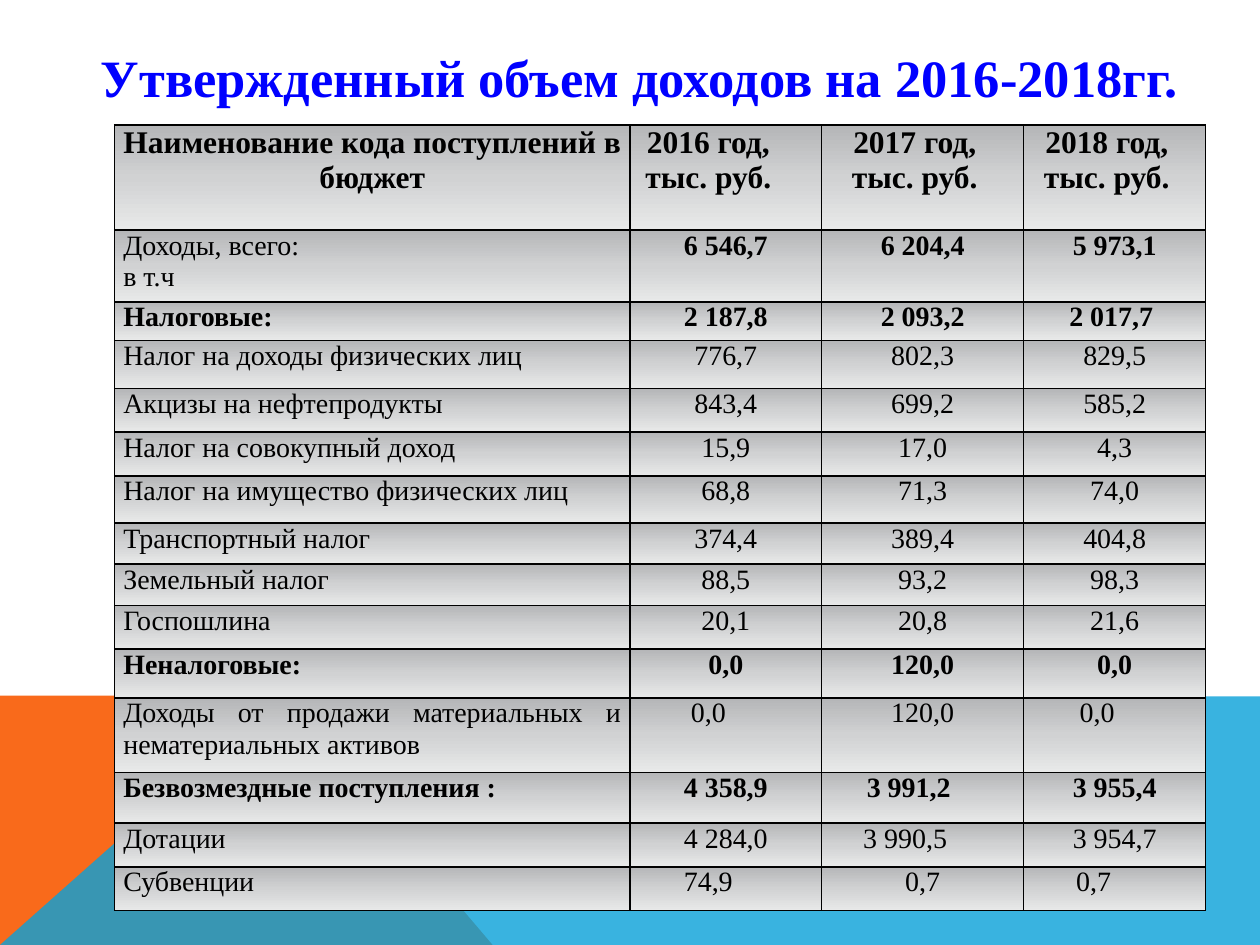
import pptx
import pptx.dml.color
import pptx.enum.text
import pptx.oxml
import pptx.oxml.ns
import pptx.util
from lxml import etree

Pt = pptx.util.Pt
ALIGN = pptx.enum.text.PP_ALIGN
FONT = "Times New Roman"

TITLE = "Утвержденный объем доходов на 2016-2018гг."
# Cells are lists of lines; a number after a text shifts it left by widening the right margin.
HEADER = ["Наименование кода поступлений в бюджет",
          ("2016 год,\nтыс. руб.", 20),
          ("2017 год,\nтыс. руб.", 9),
          ("2018 год,\nтыс. руб.", 9)]
# height, bold label, bold values, cells
ROWS = [
    (60, True, True, HEADER),
    (41, False, True, ["Доходы, всего:\nв т.ч", "6 546,7", "6 204,4", "5 973,1"]),
    (22, True, True, ["Налоговые:", "2 187,8", "2 093,2", ("2 017,7", 4)]),
    (27.5, False, False, ["Налог на доходы физических лиц", "776,7", "802,3", "829,5"]),
    (25, False, False, ["Акцизы на нефтепродукты", "843,4", "699,2", "585,2"]),
    (25, False, False, ["Налог на совокупный доход", "15,9", "17,0", "4,3"]),
    (27, False, False, ["Налог на имущество физических лиц", "68,8", "71,3", "74,0"]),
    (23.5, False, False, ["Транспортный налог", "374,4", "389,4", "404,8"]),
    (23.5, False, False, ["Земельный налог", "88,5", "93,2", "98,3"]),
    (25, False, False, ["Госпошлина", "20,1", "20,8", "21,6"]),
    (28, True, True, ["Неналоговые:", "0,0", "120,0", "0,0"]),
    (42.5, False, False, ["Доходы от продажи материальных и нематериальных активов",
                          ("0,0", 20), "120,0", ("0,0", 20)]),
    (29, True, True, ["Безвозмездные поступления :", "4 358,9", ("3 991,2", 16), "3 955,4"]),
    (25, False, False, ["Дотации", "4 284,0", ("3 990,5", 20), "3 954,7"]),
    (25, False, False, ["Субвенции", ("74,9", 20), "0,7", ("0,7", 24)]),
]
COLUMNS = [294.5, 109.5, 115.5, 104]
GRADIENT = [(0, "B5B6B8"), (50, "D1D2D3"), (100, "E8E9E9")]
BANDS = [
    ("F96A1B", 100, [(0, 540), (0, 397.5), (160.5, 397.5), (281.5, 540)]),
    ("08A1D9", 80, [(0, 540), (160.5, 397.5), (720, 398), (720, 540)]),
]


def rgb(hex_color):
    return pptx.dml.color.RGBColor.from_string(hex_color)


def add_run(p, text, size, color, bold):
    r = p.add_run()
    r.text = text
    r.font.name, r.font.size, r.font.bold = FONT, Pt(size), bold
    r.font.color.rgb = rgb(color)


def add_band(s, color, opacity, points):
    builder = s.shapes.build_freeform(Pt(points[0][0]), Pt(points[0][1]))
    builder.add_line_segments([(Pt(x), Pt(y)) for x, y in points[1:]], close=True)
    sp = builder.convert_to_shape()
    sp.shadow.inherit = False
    sp.line.fill.background()
    sp.fill.solid()
    sp.fill.fore_color.rgb = rgb(color)
    if opacity < 100:
        clr = sp._element.spPr.find(".//" + pptx.oxml.ns.qn("a:srgbClr"))
        etree.SubElement(clr, pptx.oxml.ns.qn("a:alpha"), val=str(opacity * 1000))


def style_cell(cell):
    """Give the cell 1 pt black borders and the grey vertical gradient."""
    ns = pptx.oxml.ns.nsdecls("a")
    parts = [f'<a:{side} {ns} w="12700"><a:solidFill><a:srgbClr val="000000"/></a:solidFill></a:{side}>'
             for side in ("lnL", "lnR", "lnT", "lnB")]
    stops = "".join(f'<a:gs pos="{pos * 1000}"><a:srgbClr val="{color}"/></a:gs>'
                    for pos, color in GRADIENT)
    parts.append(f'<a:gradFill {ns}><a:gsLst>{stops}</a:gsLst><a:lin ang="5400000" scaled="0"/></a:gradFill>')
    tcPr = cell._tc.get_or_add_tcPr()
    for part in parts:
        tcPr.append(pptx.oxml.parse_xml(part))


def fill_cell(cell, content, size, bold, align):
    text, shift = content if isinstance(content, tuple) else (content, 0)
    cell.margin_left, cell.margin_right = Pt(5), Pt(5 + shift)
    cell.margin_top = cell.margin_bottom = 0
    tf = cell.text_frame
    for i, line in enumerate(text.split("\n")):
        p = tf.add_paragraph() if i else tf.paragraphs[0]
        p.alignment = align
        add_run(p, line, size, "000000", bold)
    style_cell(cell)


def add_income_table(s):
    height = sum(row[0] for row in ROWS)
    frame = s.shapes.add_table(len(ROWS), len(COLUMNS), Pt(65.5), Pt(71.5),
                               Pt(sum(COLUMNS)), Pt(height))
    table = frame.table
    table.first_row = table.horz_banding = False
    for column, width in zip(table.columns, COLUMNS):
        column.width = Pt(width)
    for i, (row_height, bold_label, bold_values, cells) in enumerate(ROWS):
        table.rows[i].height = Pt(row_height)
        for j, content in enumerate(cells):
            is_label = j == 0 and i > 0
            fill_cell(table.cell(i, j), content, 16 if i else 18,
                      bold_values if j else bold_label,
                      ALIGN.JUSTIFY if is_label else ALIGN.CENTER)


def add_title(s):
    title = s.shapes.title
    title.left, title.top, title.width, title.height = Pt(48), Pt(21), Pt(635), Pt(45.5)
    tf = title.text_frame
    tf.word_wrap = True
    tf.margin_left = tf.margin_right = tf.margin_top = tf.margin_bottom = 0
    tf.vertical_anchor = pptx.enum.text.MSO_ANCHOR.MIDDLE
    p = tf.paragraphs[0]
    p.alignment = ALIGN.CENTER
    add_run(p, TITLE, 30, "0000FF", True)


def main():
    prs = pptx.Presentation()
    prs.slide_width, prs.slide_height = Pt(720), Pt(540)
    s = prs.slides.add_slide(prs.slide_layouts[5])
    for band in BANDS:
        add_band(s, *band)
    add_title(s)
    add_income_table(s)
    prs.save("out.pptx")


if __name__ == "__main__":
    main()
